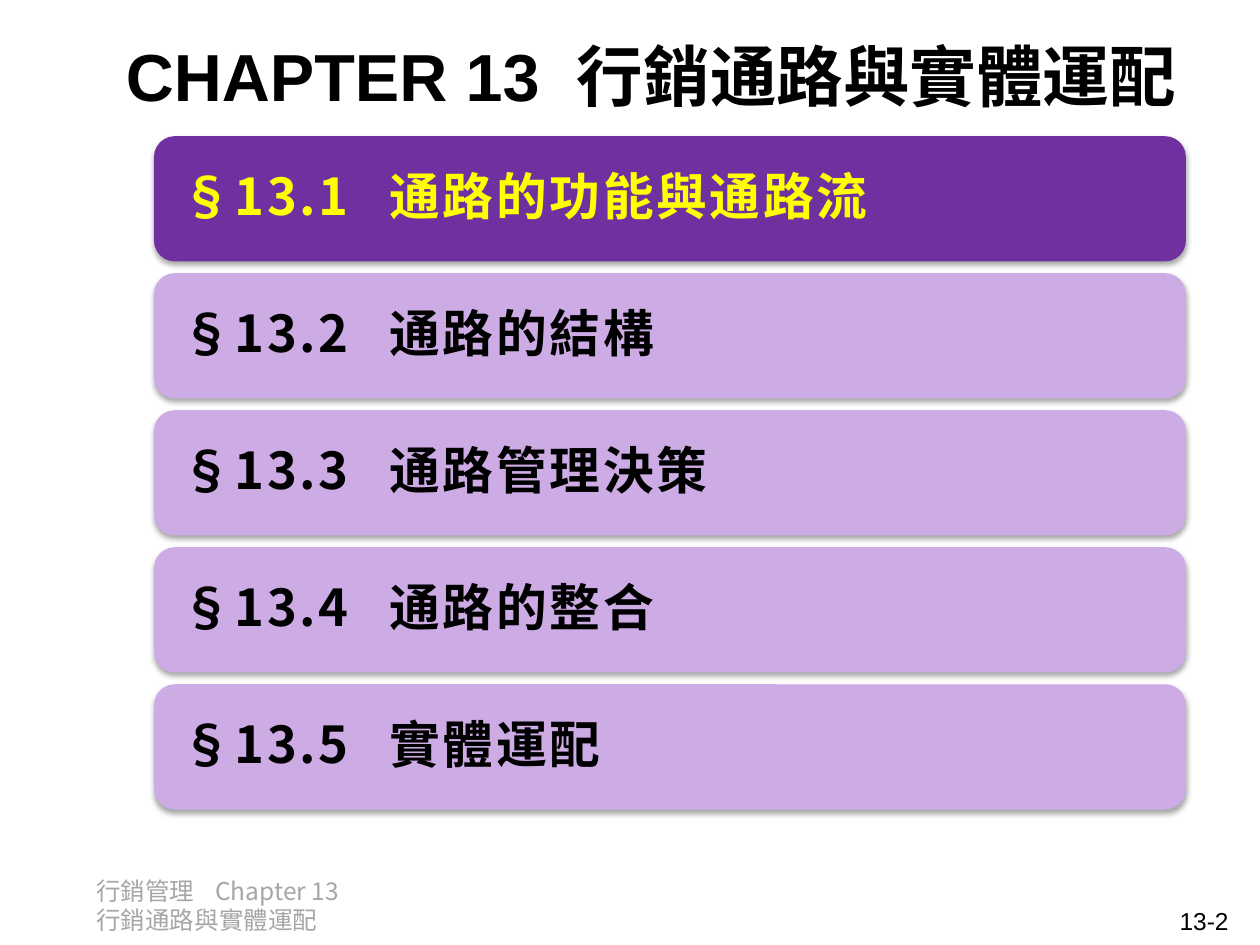
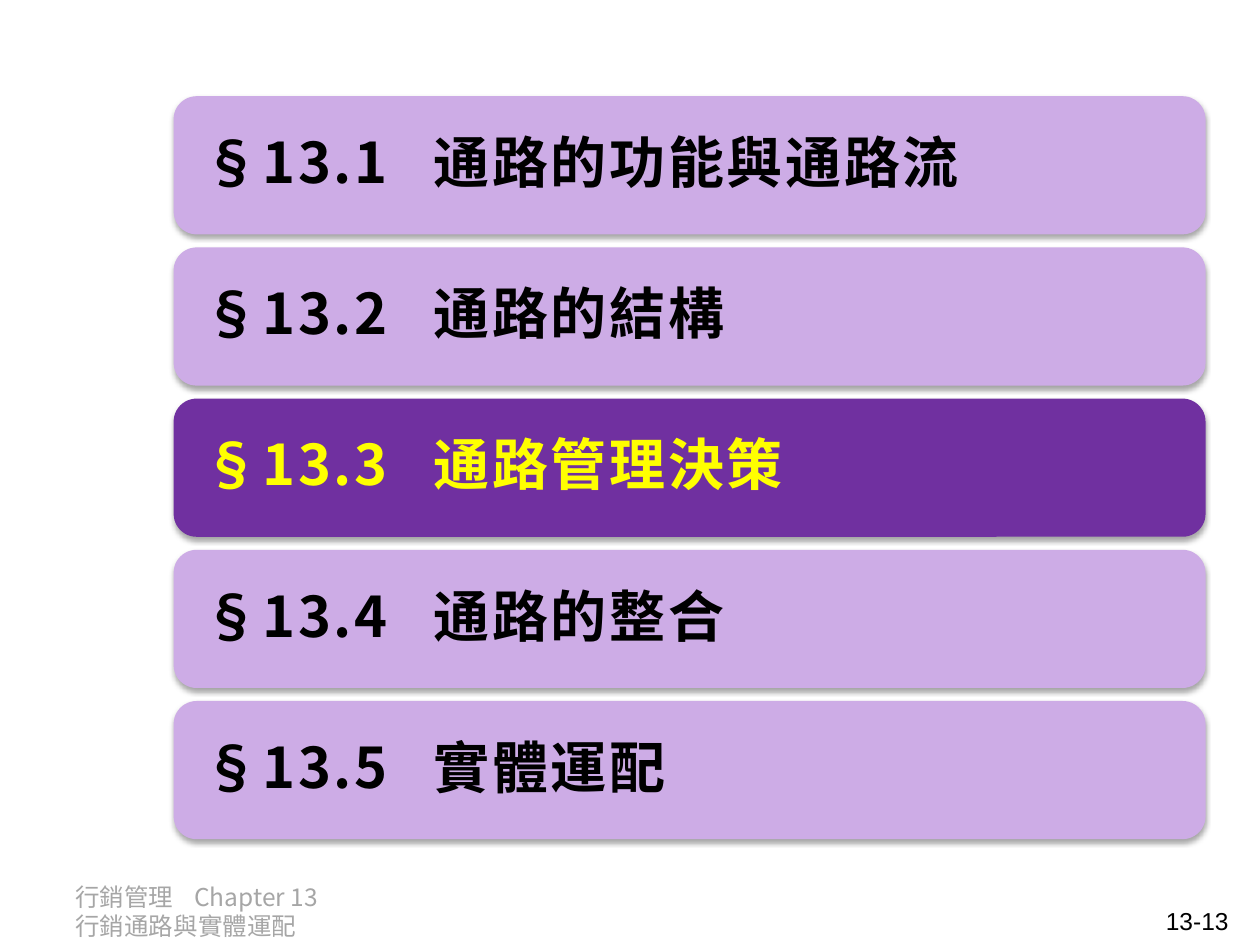
from lxml.etree import SubElement
from pptx import Presentation
from pptx.dml.color import RGBColor
from pptx.enum.shapes import MSO_SHAPE as Shape
from pptx.enum.text import MSO_ANCHOR as Anchor, PP_ALIGN as Align
from pptx.oxml import parse_xml
from pptx.oxml.ns import nsdecls, qn
from pptx.util import Pt

SECTIONS = ["通路的功能與通路流", "通路的結構", "通路管理決策", "通路的整合", "實體運配"]
TITLE_ONLY, BLANK = 5, 6


def color(hex_string):
    return RGBColor.from_string(hex_string)


def add_text(paragraph, text, font="Arial", size=14, fill="000000", bold=False,
             spacing=0, outline=None):
    """Append one formatted run; spacing is the extra space per letter in points."""
    run = paragraph.add_run()
    run.text = text
    run.font.name = font
    run.font.size = Pt(size)
    run.font.bold = bold
    run.font.color.rgb = color(fill)
    properties = run.font._element
    if spacing:
        properties.set("spc", str(round(spacing * 100)))
    if outline:
        properties.insert(0, parse_xml(
            f'<a:ln {nsdecls("a")} w="{Pt(0.71)}"><a:solidFill>'
            f'<a:srgbClr val="{outline}"/></a:solidFill></a:ln>'))
    east_asian = SubElement(properties, qn("a:ea"))
    east_asian.set("typeface", ChapterDeck.CJK)


class ChapterDeck:
    CJK = "Noto Sans CJK SC"
    DARK, LIGHT = "7030A0", "CDACE6"
    HIGHLIGHT, INK, MUTED = "FFFF00", "000000", "A6A6A6"
    OUTLINE = "5E457C"
    ROW_WIDTH = 589.7

    def __init__(self):
        self.deck = Presentation()
        self.deck.slide_width, self.deck.slide_height = Pt(720), Pt(540)
        self.slide = None

    def new_slide(self, layout):
        self.slide = self.deck.slides.add_slide(self.deck.slide_layouts[layout])

    def title(self, chapter, name):
        heading = self.slide.shapes.title
        heading.left, heading.top = Pt(48), Pt(0)
        heading.width, heading.height = Pt(648), Pt(85.7)
        frame = heading.text_frame
        frame.vertical_anchor = Anchor.MIDDLE
        paragraph = frame.paragraphs[0]
        paragraph.alignment = Align.CENTER
        # The widened space separates the chapter number from its name
        for text, spacing in ((chapter, 0), (" ", 10.5), (name, 0)):
            add_text(paragraph, text, size=38, bold=True, spacing=spacing,
                     outline=self.OUTLINE)

    def text_box(self, left, top, width, height):
        box = self.slide.shapes.add_textbox(Pt(left), Pt(top), Pt(width), Pt(height))
        box.text_frame.word_wrap = True
        return box.text_frame.paragraphs[0]

    def footer(self, left, top, page):
        course = self.text_box(left, top, 176, 28.8)
        course.line_spacing = Pt(16.7)
        for text, spacing in (("行銷管理", 0), (" ", 8.5), ("Chapter 13", 0),
                              (" ", 8.5), ("行銷通路與實體運配", 0)):
            add_text(course, text, font=self.CJK, fill=self.MUTED, spacing=spacing)
        number = self.text_box(541.4, 514, 167.8, 21)
        number.alignment = Align.RIGHT
        add_text(number, page)

    def soft_shadow(self, shape):
        shape.shadow.inherit = False
        effects = shape._element.spPr.find(qn("a:effectLst"))
        effects.append(parse_xml(
            f'<a:outerShdw {nsdecls("a")} blurRad="{Pt(3.1)}" dist="{Pt(1.8)}" '
            'dir="5400000" rotWithShape="0"><a:srgbClr val="000000">'
            '<a:alpha val="35000"/></a:srgbClr></a:outerShdw>'))

    def section_row(self, left, top, height, number, name, size, current):
        row = self.slide.shapes.add_shape(
            Shape.ROUNDED_RECTANGLE, Pt(left), Pt(top), Pt(self.ROW_WIDTH), Pt(height))
        row.fill.solid()
        row.fill.fore_color.rgb = color(self.DARK if current else self.LIGHT)
        row.line.fill.background()
        self.soft_shadow(row)

        frame = row.text_frame
        frame.word_wrap = True
        frame.vertical_anchor = Anchor.MIDDLE
        frame.margin_left = frame.margin_right = Pt(size * 0.42)
        paragraph = frame.paragraphs[0]
        paragraph.alignment = Align.LEFT
        paragraph.line_spacing = 0.9
        # Names line up at one tab stop
        tabs = SubElement(paragraph._p.get_or_add_pPr(), qn("a:tabLst"))
        stop = SubElement(tabs, qn("a:tab"))
        stop.set("pos", str(Pt(size * 4.1)))
        stop.set("algn", "l")
        style = dict(size=size, bold=True, spacing=1.5,
                     fill=self.HIGHLIGHT if current else self.INK)
        add_text(paragraph, f"§13.{number}\t", font=self.CJK, **style)
        add_text(paragraph, name, **style)

    def agenda(self, left, top, pitch, size, current):
        for index, name in enumerate(SECTIONS):
            self.section_row(left, top + index * pitch, pitch * 0.914,
                             index + 1, name, size, index + 1 == current)


def main():
    chapter = ChapterDeck()

    # Chapter opening, first section
    chapter.new_slide(TITLE_ONLY)
    chapter.title("CHAPTER 13", "行銷通路與實體運配")
    chapter.footer(48, 497, "13-2")
    chapter.agenda(left=88, top=77.8, pitch=78.3, size=29, current=1)

    # Divider, third section
    chapter.new_slide(BLANK)
    chapter.footer(36, 500.4, "13-13")
    chapter.agenda(left=99.2, top=55, pitch=86.4, size=32, current=3)

    chapter.deck.save("out.pptx")


if __name__ == "__main__":
    main()
